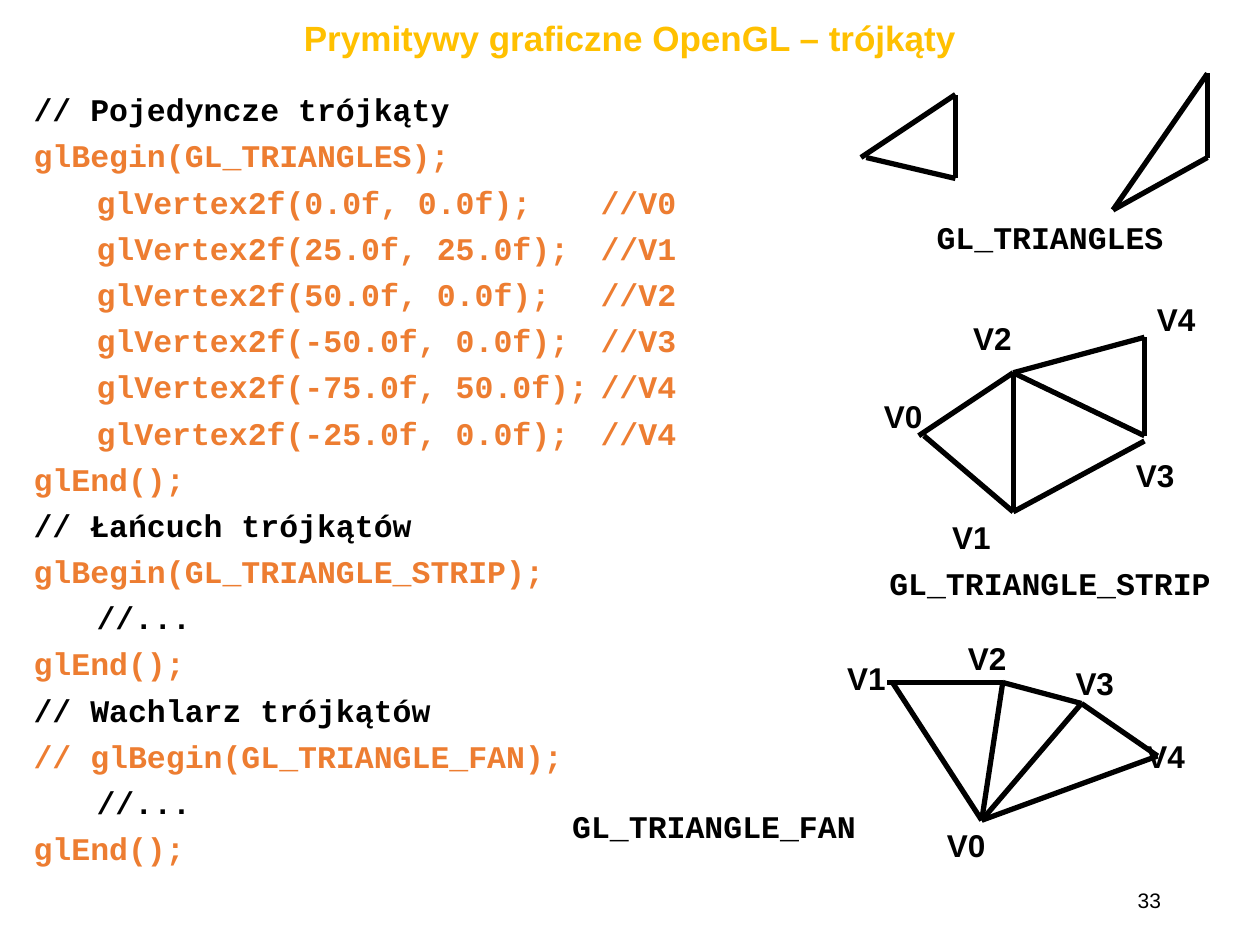
from dataclasses import dataclass

from lxml import etree
from pptx import Presentation
from pptx import util as u
from pptx.dml.color import RGBColor
from pptx.enum import shapes, text
from pptx.oxml import ns

ALIGN = text.PP_ALIGN
ANCHOR = text.MSO_ANCHOR
COLUMNS, ROWS = 240, 180  # 24 grid cells to the inch


@dataclass(frozen=True)
class Theme:
    ink: RGBColor = RGBColor(0x00, 0x00, 0x00)
    heading: RGBColor = RGBColor(0xFF, 0xC0, 0x00)
    code: RGBColor = RGBColor(0xED, 0x7D, 0x31)
    sans: str = "Arial"
    mono: str = "Courier New"
    heading_size: int = 20
    text_size: int = 18
    number_size: int = 12
    code_gap: float = 4.8
    stroke: int = 3


CODE = [
    "// Pojedyncze trójkąty",
    "glBegin(GL_TRIANGLES);",
    "\tglVertex2f(0.0f, 0.0f);\t\t//V0",
    "\tglVertex2f(25.0f, 25.0f);\t//V1",
    "\tglVertex2f(50.0f, 0.0f);\t//V2",
    "\tglVertex2f(-50.0f, 0.0f);\t//V3",
    "\tglVertex2f(-75.0f, 50.0f);\t//V4",
    "\tglVertex2f(-25.0f, 0.0f);\t//V4",
    "glEnd();",
    "// Łańcuch trójkątów",
    "glBegin(GL_TRIANGLE_STRIP);",
    "\t//...",
    "glEnd();",
    "// Wachlarz trójkątów",
    "// glBegin(GL_TRIANGLE_FAN);",
    "\t//...",
    "glEnd();",
]

# Each figure: caption, caption corner, edges, corners of the labels V0, V1, ...
FIGURES = [
    ("GL_TRIANGLES", (164, 40.25), [
        ((164, 30), (182, 18)), ((165, 30), (182, 34)), ((182, 34), (182, 18)),
        ((212, 40), (230, 14)), ((212, 40), (230, 30)), ((230, 30), (230, 14)),
    ], []),
    ("GL_TRIANGLE_STRIP", (164, 106.25), [
        ((175, 83), (193, 71)), ((176, 83), (193, 97.5)),
        ((193, 97.5), (193, 71)), ((193, 97.5), (218, 84)),
        ((193, 71), (218, 83)), ((193, 71), (218, 64.25)),
        ((218, 64.25), (218, 83)),
    ], [(166, 74.5), (179, 97.5), (183, 59.5), (214, 85.75), (218, 56)]),
    ("GL_TRIANGLE_FAN", (100, 152.5), [
        ((170, 130), (187, 156.25)), ((191, 130), (187, 156.25)),
        ((206, 134), (187, 156.25)), ((220.5, 144), (187, 156.25)),
        ((169, 130), (191, 130)), ((191, 130), (206, 134)),
        ((206, 134), (220.5, 144)),
    ], [(178, 156.25), (159, 124.25), (182, 120.5), (202.5, 125.25),
        (216, 139.25)]),
]


class SlideBuilder:
    def __init__(self, deck, theme):
        self.theme = theme
        self.slide = deck.slides.add_slide(deck.slide_layouts[1])
        self.cell_width = deck.slide_width / COLUMNS
        self.cell_height = deck.slide_height / ROWS

    def point(self, column, row):
        return round(column * self.cell_width), round(row * self.cell_height)

    def place(self, holder, corner, extent, anchor=ANCHOR.TOP):
        holder.left, holder.top = self.point(*corner)
        holder.width, holder.height = self.point(*extent)
        frame = holder.text_frame
        frame.word_wrap = True
        frame.auto_size = text.MSO_AUTO_SIZE.NONE
        frame.vertical_anchor = anchor
        return frame

    def style(self, paragraph, size, face, color, align, bold=True):
        paragraph.alignment = align
        font = paragraph.font
        font.size, font.name, font.bold = u.Pt(size), face, bold
        font.color.rgb = color

    def title(self, wording, corner, extent):
        frame = self.place(self.slide.shapes.title, corner, extent)
        frame.text = wording
        self.style(frame.paragraphs[0], self.theme.heading_size,
                   self.theme.sans, self.theme.heading, ALIGN.CENTER)

    def listing(self, lines, corner, extent):
        """Fill the body with code; plain comments are shown in ink."""
        frame = self.place(self.slide.placeholders[1], corner, extent)
        frame.text = "\n".join(lines)
        for line, paragraph in zip(lines, frame.paragraphs):
            comment = line.strip().startswith("//") and "glBegin" not in line
            color = self.theme.ink if comment else self.theme.code
            self.style(paragraph, self.theme.text_size, self.theme.mono,
                       color, ALIGN.JUSTIFY)
            paragraph.space_before = u.Pt(self.theme.code_gap)
            properties = paragraph._p.get_or_add_pPr()
            properties.set("marL", str(u.Inches(0.5)))
            properties.set("indent", str(u.Inches(-0.5)))
            bullet = etree.Element(ns.qn("a:buNone"))
            properties.find(ns.qn("a:spcBef")).addnext(bullet)

    def label(self, wording, corner, extent, face, align=ALIGN.LEFT,
              size=None, bold=True, anchor=ANCHOR.TOP):
        box = self.slide.shapes.add_textbox(0, 0, 0, 0)
        frame = self.place(box, corner, extent, anchor)
        frame.text = wording
        self.style(frame.paragraphs[0], size or self.theme.text_size, face,
                   self.theme.ink, align, bold)

    def edge(self, start, end):
        edge = self.slide.shapes.add_connector(
            shapes.MSO_CONNECTOR.STRAIGHT, *self.point(*start), *self.point(*end))
        edge.line.color.rgb = self.theme.ink
        edge.line.width = u.Pt(self.theme.stroke)
        etree.SubElement(edge._element.spPr, ns.qn("a:effectLst"))

    def figure(self, caption, caption_corner, edges, vertex_corners):
        for start, end in edges:
            self.edge(start, end)
        for index, corner in enumerate(vertex_corners):
            self.label(f"V{index}", corner, (18, 9.5), self.theme.sans)
        self.label(caption, caption_corner, (72, 9.5), self.theme.mono,
                   ALIGN.CENTER)

    def page_number(self, number, corner, extent):
        self.label(str(number), corner, extent, self.theme.sans, ALIGN.RIGHT,
                   self.theme.number_size, False, ANCHOR.MIDDLE)


def main():
    deck = Presentation()
    deck.slide_width, deck.slide_height = u.Inches(10), u.Inches(7.5)
    builder = SlideBuilder(deck, Theme())
    builder.title("Prymitywy graficzne OpenGL – trójkąty", (2, 2), (236, 10.25))
    builder.listing(CODE, (4, 16), (144, 148))
    for figure in FIGURES:
        builder.figure(*figure)
    builder.page_number(33, (169.5, 166.75), (54, 9.5))
    deck.save("out.pptx")


if __name__ == "__main__":
    main()
